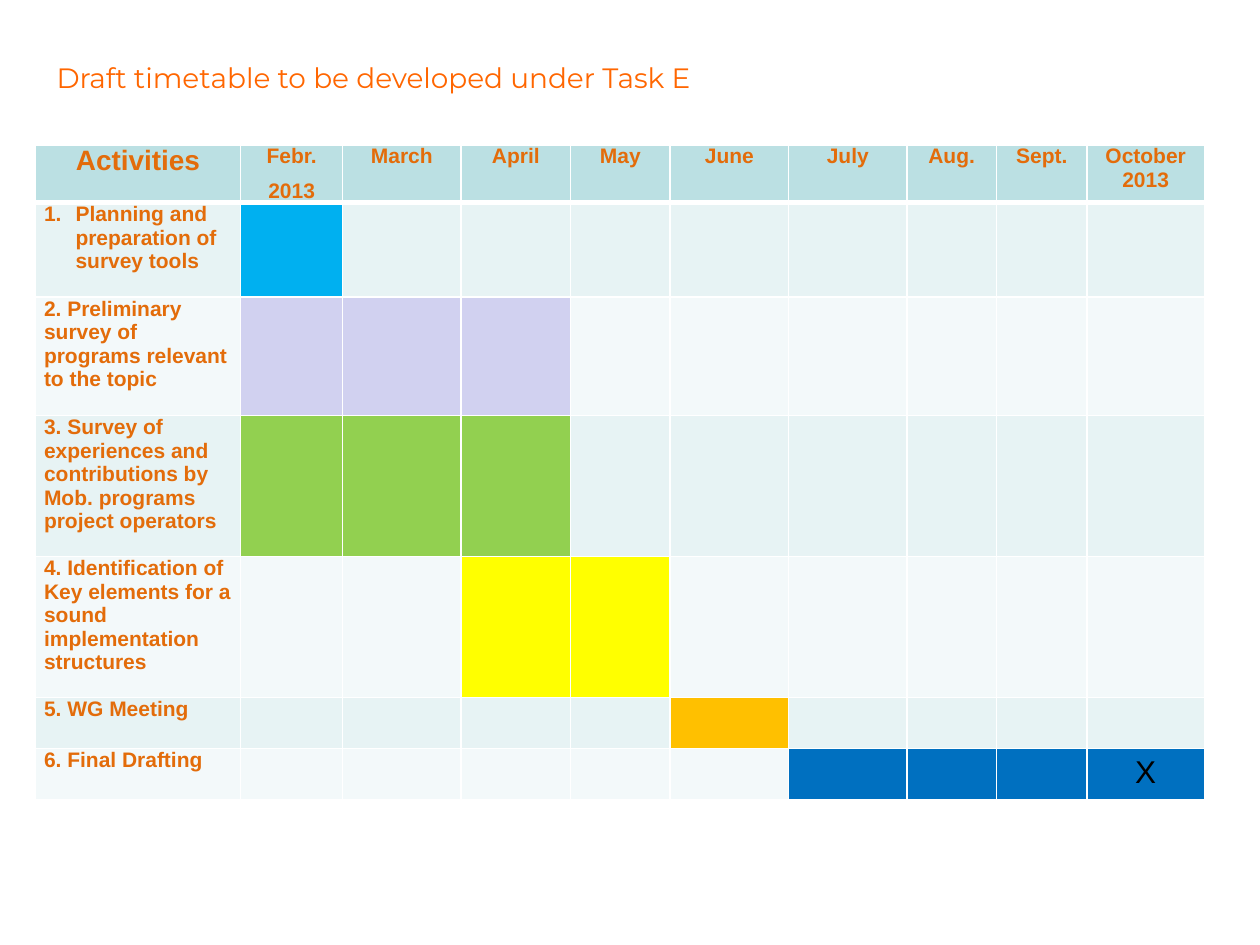
from pptx import Presentation
from pptx.dml.color import RGBColor as RGB
from pptx.enum.text import MSO_ANCHOR as Anchor, PP_ALIGN as Align
from pptx.util import Inches, Pt
from lxml.etree import SubElement
from pptx.oxml.ns import qn

TITLE = "Draft timetable to be developed under Task E"
HEADS = ["Activities", "Febr.\n2013", "March", "April", "May", "June",
         "July", "Aug.", "Sept.", "October 2013"]
# activity, first month column, last month column, bar colour
TASKS = [
    ("Planning and preparation of survey tools", 1, 1, "sky"),
    ("2. Preliminary survey of programs relevant to the topic", 1, 3, "lilac"),
    ("3. Survey of experiences and contributions by Mob. programs "
     "project operators", 1, 3, "green"),
    ("4. Identification of Key elements for a sound implementation structures",
     3, 4, "yellow"),
    ("5. WG Meeting", 5, 5, "amber"),
    ("6. Final Drafting", 6, 9, "blue"),
]
COLS = [1.63, 0.81, 0.94, 0.87, 0.79, 0.94, 0.94, 0.71, 0.72, 0.93]
ROWS = [0.45, 0.75, 0.94, 1.12, 1.12, 0.4, 0.4]
COLOR = {
    "title": "FF6600", "text": "E36C0A", "mark": "000000", "line": "FFFFFF",
    "head": "BBE0E3", "odd": "E7F3F4", "even": "F3F9FA",
    "sky": "00B0F0", "lilac": "D1D1F0", "green": "92D050",
    "yellow": "FFFF00", "amber": "FFC000", "blue": "0070C0",
}


def style(para, size, color, bold=False, face="Arial"):
    font = para.font
    font.name, font.size, font.bold = face, Pt(size), bold
    font.color.rgb = RGB.from_string(COLOR[color])


def paint(cell, color, base=1):
    """Draw the cell's borders, the bottom one base points wide, and fill it."""
    props = cell._tc.get_or_add_tcPr()
    for side in "LRTB":
        width = base if side == "B" else 1
        line = SubElement(props, qn("a:ln" + side), w=str(Pt(width)))
        fill = SubElement(line, qn("a:solidFill"))
        SubElement(fill, qn("a:srgbClr"), val=COLOR["line"])
    cell.fill.solid()
    cell.fill.fore_color.rgb = RGB.from_string(COLOR[color])


def write(cell, text, size=12, align=Align.LEFT):
    cell.margin_left = cell.margin_right = Inches(0.07)
    cell.margin_top = cell.margin_bottom = 0
    cell.text = text
    for i, para in enumerate(cell.text_frame.paragraphs):
        para.alignment = align
        if i:
            para.space_before = Pt(6)
        style(para, size, "text", True)


def number(para):
    props = para._p.get_or_add_pPr()
    props.set("marL", str(Inches(0.25)))
    props.set("indent", str(-Inches(0.25)))
    SubElement(props, qn("a:buAutoNum"), type="arabicPeriod")


def add_title(slide):
    box = slide.shapes.add_textbox(Inches(0.35), Inches(0.43),
                                   Inches(9.29), Inches(0.37))
    frame = box.text_frame
    frame.word_wrap = True
    frame.vertical_anchor = Anchor.MIDDLE
    frame.text = TITLE
    style(frame.paragraphs[0], 16, "title", face="Montserrat")


def add_plan(slide):
    table = slide.shapes.add_table(
        len(ROWS), len(COLS), Inches(0.28), Inches(1.15),
        Inches(sum(COLS)), Inches(sum(ROWS))).table
    for col, width in zip(table.columns, COLS):
        col.width = Inches(width)
    for row, height in zip(table.rows, ROWS):
        row.height = Inches(height)

    for c, head in enumerate(HEADS):
        cell = table.cell(0, c)
        paint(cell, "head", 3)
        write(cell, head, 12 if c else 16, Align.CENTER)

    for r, (task, first, last, bar) in enumerate(TASKS, 1):
        band = "odd" if r % 2 else "even"
        for c in range(len(COLS)):
            paint(table.cell(r, c), bar if first <= c <= last else band)
        write(table.cell(r, 0), task)
    number(table.cell(1, 0).text_frame.paragraphs[0])

    end = table.cell(len(TASKS), len(COLS) - 1)
    end.text = "X"
    mark = end.text_frame.paragraphs[0]
    mark.alignment = Align.CENTER
    style(mark, 18, "mark")


def main():
    deck = Presentation()
    deck.slide_width, deck.slide_height = Inches(10), Inches(7.5)
    slide = deck.slides.add_slide(deck.slide_layouts[6])
    add_plan(slide)
    add_title(slide)
    deck.save("out.pptx")


if __name__ == "__main__":
    main()
